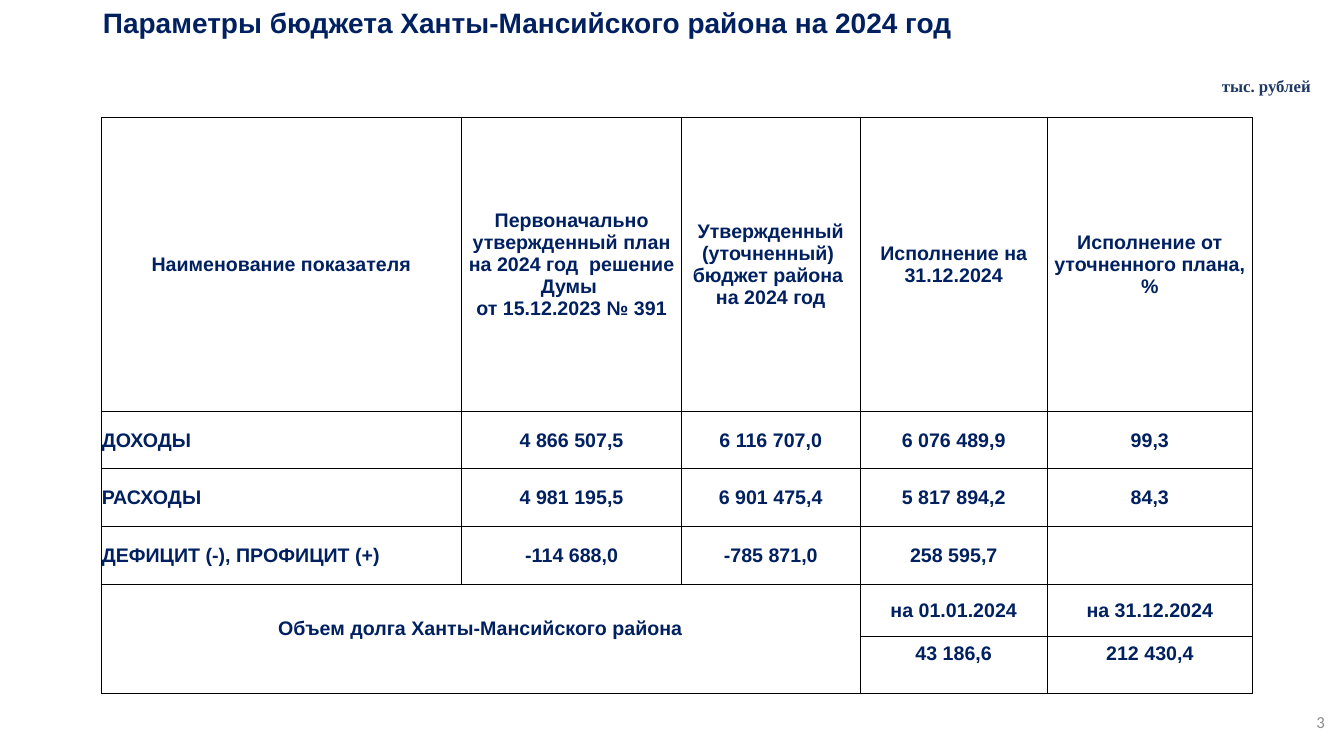
from pptx import Presentation, util as u
from pptx.dml.color import RGBColor
from pptx.enum import text
from pptx.oxml import parse_xml
from pptx.oxml.ns import nsdecls

TITLE = "Параметры бюджета Ханты-Мансийского района на 2024 год"
UNIT = "тыс. рублей"
PAGE = "3"
ROWS = [
    ["Наименование показателя",
     "Первоначально утвержденный план на 2024 год  решение Думы \nот 15.12.2023 № 391",
     "Утвержденный (уточненный)  бюджет района \nна 2024 год",
     "Исполнение на 31.12.2024",
     "Исполнение от уточненного плана, %"],
    ["ДОХОДЫ", "4 866 507,5", "6 116 707,0", "6 076 489,9", "99,3"],
    ["РАСХОДЫ", "4 981 195,5", "6 901 475,4", "5 817 894,2", "84,3"],
    ["ДЕФИЦИТ (-), ПРОФИЦИТ (+)", "-114 688,0", "-785 871,0", "258 595,7", ""],
    ["Объем долга Ханты-Мансийского района", "", "", "на 01.01.2024", "на 31.12.2024"],
    ["", "", "", "43 186,6", "212 430,4"],
]
WIDTHS = [3.58, 2.18, 1.77, 1.86, 2.03]
HEIGHTS = [2.92, 0.57, 0.57, 0.58, 0.51, 0.57]
DEBT = 4  # first row of the debt block
THEME = {  # font, size, colour, bold
    "title": ("Arial", 20, "002060", True),
    "cell": ("Arial", 14, "002060", True),
    "unit": ("Times New Roman", 12, "203864", True),
    "page": ("Calibri", 12, "8C8C8C", False),
    "rule": ("000000", 0.5),
}
ALIGN, ANCHOR = text.PP_ALIGN, text.MSO_ANCHOR


def style(frame, role, align):
    name, size, color, bold = THEME[role]
    for para in frame.paragraphs:
        para.alignment = align
        for run in para.runs:
            run.font.name, run.font.size, run.font.bold = name, u.Pt(size), bold
            run.font.color.rgb = RGBColor.from_string(color)


def place(shape, left, top, width, height):
    shape.left, shape.top = u.Inches(left), u.Inches(top)
    shape.width, shape.height = u.Inches(width), u.Inches(height)


def label(slide, words, role, box, align, anchor=ANCHOR.TOP):
    shape = slide.shapes.add_textbox(*map(u.Inches, box))
    frame = shape.text_frame
    frame.text, frame.word_wrap, frame.vertical_anchor = words, True, anchor
    style(frame, role, align)


def border(cell):
    color, width = THEME["rule"]
    for pos, side in enumerate("LRTB"):
        cell._tc.get_or_add_tcPr().insert(pos, parse_xml(
            f'<a:ln{side} {nsdecls("a")} w="{u.Pt(width)}"><a:solidFill>'
            f'<a:srgbClr val="{color}"/></a:solidFill></a:ln{side}>'))


def fill_table(slide):
    box = map(u.Inches, (1, 1.16, sum(WIDTHS), sum(HEIGHTS)))
    table = slide.shapes.add_table(len(ROWS), len(WIDTHS), *box).table
    table.first_row = table.horz_banding = False
    for col, width in zip(table.columns, WIDTHS):
        col.width = u.Inches(width)
    for row, height in zip(table.rows, HEIGHTS):
        row.height = u.Inches(height)
    for r, row in enumerate(ROWS):
        for c, words in enumerate(row):
            cell = table.cell(r, c)
            cell.text = words
            cell.vertical_anchor = ANCHOR.MIDDLE
            cell.margin_left = cell.margin_right = cell.margin_top = u.Inches(0.01)
            raised = r > DEBT or (r == DEBT and c == 0)
            cell.margin_bottom = u.Inches(0.22 if raised else 0)
            cell.fill.background()
            border(cell)
            named = c == 0 and 0 < r < DEBT
            style(cell.text_frame, "cell", ALIGN.LEFT if named else ALIGN.CENTER)
    table.cell(DEBT, 0).merge(table.cell(DEBT + 1, 2))


def main():
    deck = Presentation()
    deck.slide_width, deck.slide_height = u.Inches(13.33), u.Inches(7.5)
    slide = deck.slides.add_slide(deck.slide_layouts[5])
    title = slide.shapes.title
    place(title, 0.92, 0, 12.32, 0.44)
    title.text_frame.text = TITLE
    title.text_frame.vertical_anchor = ANCHOR.TOP
    title.text_frame.auto_size = text.MSO_AUTO_SIZE.NONE
    style(title.text_frame, "title", ALIGN.LEFT)
    fill_table(slide)
    label(slide, UNIT, "unit", (12.02, 0.7, 1.1, 0.3), ALIGN.LEFT)
    label(slide, PAGE, "page", (10.24, 6.96, 3, 0.4), ALIGN.RIGHT, ANCHOR.MIDDLE)
    deck.save("out.pptx")


if __name__ == "__main__":
    main()
